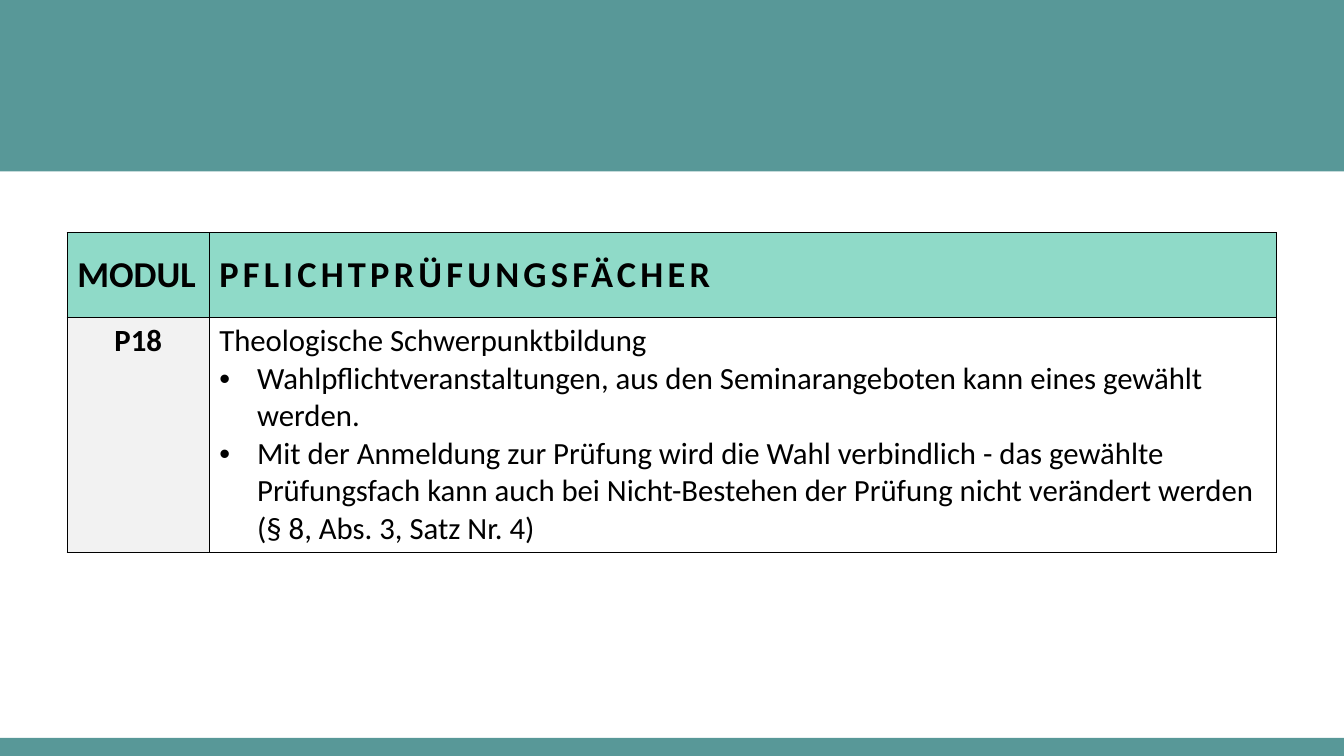
from dataclasses import dataclass

from lxml import etree
from pptx import Presentation
from pptx.dml.color import RGBColor
from pptx.enum import shapes, text
from pptx.oxml.ns import qn
from pptx.util import Pt

COLORS = {"teal": "589898", "mint": "8FDAC8", "grey": "F2F2F2",
          "white": "FFFFFF", "black": "000000"}
SLIDE_W, SLIDE_H = 960, 540
INDENT = 27


@dataclass
class Band:
    top: float
    height: float


@dataclass
class Para:
    text: str
    bullet: bool = False


@dataclass
class CellSpec:
    paras: list[Para]
    fill: str
    size: float
    bold: bool = True
    spacing: float = 0
    align: text.PP_ALIGN = text.PP_ALIGN.LEFT
    anchor: text.MSO_ANCHOR = text.MSO_ANCHOR.TOP


BANDS = [Band(0, 122.4), Band(527, 13)]
COLUMNS = [101.5, 762.5]
ROWS = [60.5, 168]
HEADER = {"fill": "mint", "size": 26, "anchor": text.MSO_ANCHOR.MIDDLE}
CELLS = [
    [CellSpec([Para("MODUL")], **HEADER),
     CellSpec([Para("PFLICHTPRÜFUNGSFÄCHER")], spacing=3, **HEADER)],
    [CellSpec([Para("P18")], "grey", 22, align=text.PP_ALIGN.CENTER),
     CellSpec([
         Para("Theologische Schwerpunktbildung"),
         Para("Wahlpflichtveranstaltungen, aus den Seminarangeboten kann eines "
              "gewählt werden.", True),
         Para("Mit der Anmeldung zur Prüfung wird die Wahl verbindlich - das "
              "gewählte Prüfungsfach kann auch bei Nicht-Bestehen der Prüfung "
              "nicht verändert werden (§ 8, Abs. 3, Satz Nr. 4)", True),
     ], "white", 22, bold=False)],
]


def rgb(name: str) -> RGBColor:
    return RGBColor.from_string(COLORS[name])


def add_band(s, band: Band) -> None:
    sp = s.shapes.add_shape(shapes.MSO_SHAPE.RECTANGLE, 0, Pt(band.top),
                            Pt(SLIDE_W), Pt(band.height))
    sp.shadow.inherit = False
    sp.fill.solid()
    sp.fill.fore_color.rgb = rgb("teal")
    sp.line.fill.background()


def add_borders(cell) -> None:
    """Draw thin black lines on all four sides; call before filling the cell."""
    tc_pr = cell._tc.get_or_add_tcPr()
    for side in ("lnL", "lnR", "lnT", "lnB"):
        ln = etree.SubElement(tc_pr, qn(f"a:{side}"), w=str(Pt(1)))
        fill = etree.SubElement(ln, qn("a:solidFill"))
        etree.SubElement(fill, qn("a:srgbClr"), val=COLORS["black"])


def add_bullet(p) -> None:
    p_pr = p._p.get_or_add_pPr()
    p_pr.set("marL", str(Pt(INDENT)))
    p_pr.set("indent", str(-Pt(INDENT)))
    etree.SubElement(p_pr, qn("a:buFont"), typeface="Arial")
    etree.SubElement(p_pr, qn("a:buChar"), char="•")


def fill_cell(cell, content: CellSpec) -> None:
    add_borders(cell)
    cell.fill.solid()
    cell.fill.fore_color.rgb = rgb(content.fill)
    cell.vertical_anchor = content.anchor
    tf = cell.text_frame
    font_format = {"name": "Calibri", "size": Pt(content.size), "bold": content.bold}
    for i, para in enumerate(content.paras):
        p = tf.add_paragraph() if i else tf.paragraphs[0]
        p.alignment = content.align
        if para.bullet:
            add_bullet(p)
        r = p.add_run()
        r.text = para.text
        for key, value in font_format.items():
            setattr(r.font, key, value)
        r.font.color.rgb = rgb("black")
        if content.spacing:
            r._r.get_or_add_rPr().set("spc", str(content.spacing * 100))


def add_module_table(s) -> None:
    table = s.shapes.add_table(len(ROWS), len(COLUMNS), Pt(48), Pt(166.3),
                               Pt(sum(COLUMNS)), Pt(sum(ROWS))).table
    table.horz_banding = False
    for column, width in zip(table.columns, COLUMNS):
        column.width = Pt(width)
    for row, height, contents in zip(table.rows, ROWS, CELLS):
        row.height = Pt(height)
        for cell, content in zip(row.cells, contents):
            fill_cell(cell, content)


def main() -> None:
    prs = Presentation()
    prs.slide_width, prs.slide_height = Pt(SLIDE_W), Pt(SLIDE_H)
    s = prs.slides.add_slide(prs.slide_layouts[6])
    for band in BANDS:
        add_band(s, band)
    add_module_table(s)
    prs.save("out.pptx")


if __name__ == "__main__":
    main()
